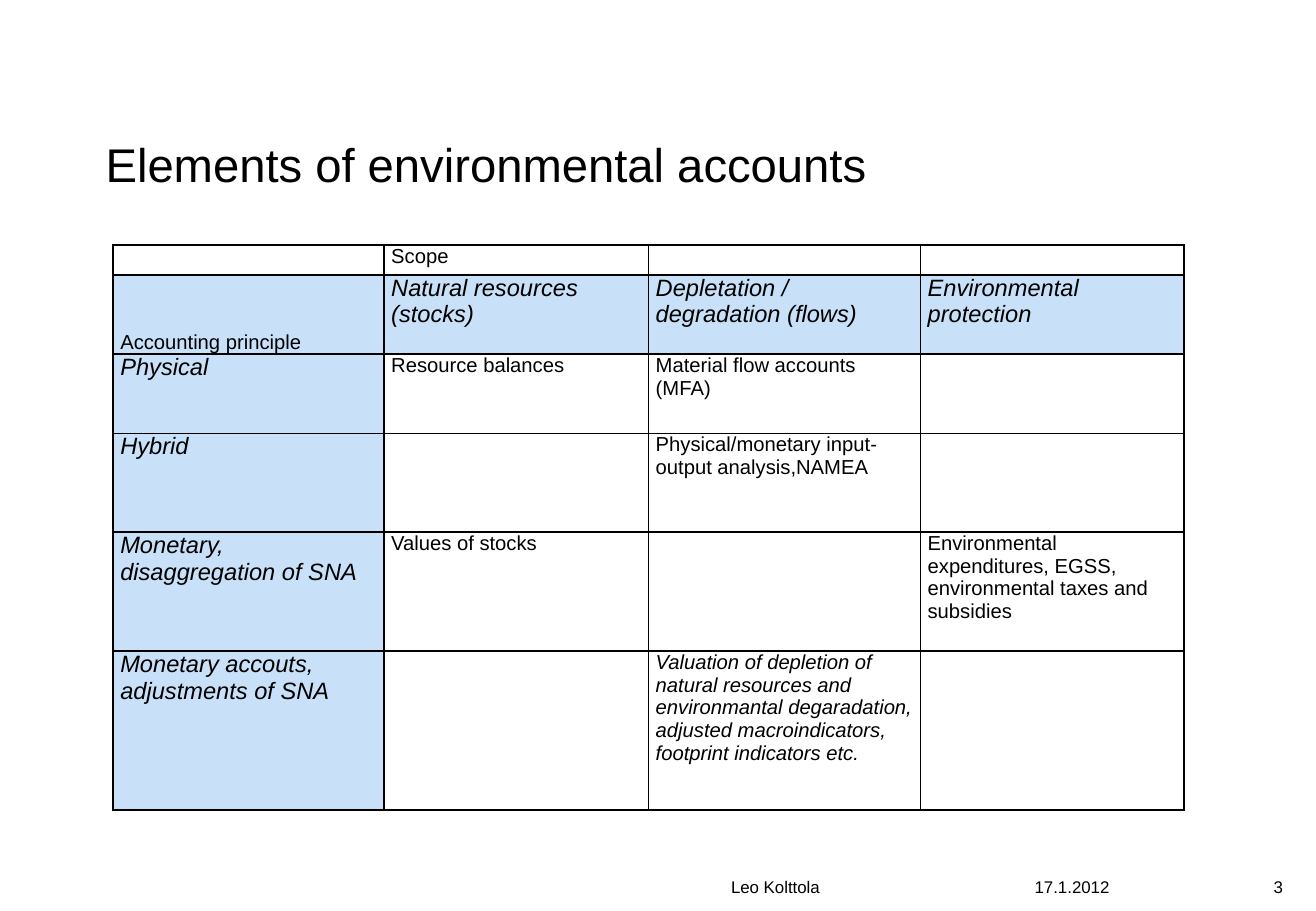
from lxml.etree import SubElement as Sub
from pptx import Presentation
from pptx.dml.color import RGBColor as RGB
from pptx.enum.text import MSO_ANCHOR as Anchor, PP_ALIGN as Align
from pptx.oxml.ns import qn
from pptx.util import Pt

TITLE = "Elements of environmental accounts"
# Cells are (style, text); None is an empty cell.
ROWS = [
    [None, ("body", "Scope"), None, None],
    [("body", "Accounting principle"), ("head", "Natural resources (stocks)"),
     ("head", "Depletation / degradation (flows)"),
     ("head", "Environmental protection")],
    [("head", "Physical"), ("body", "Resource balances"),
     ("body", "Material flow accounts (MFA)"), None],
    [("head", "Hybrid"), None,
     ("body", "Physical/monetary input-output analysis,NAMEA"), None],
    [("head", "Monetary, disaggregation of SNA"), ("body", "Values of stocks"),
     None, ("body", "Environmental expenditures, EGSS, "
                    "environmental taxes and subsidies")],
    [("head", "Monetary accouts, adjustments of SNA"), None,
     ("note", "Valuation of depletion of natural resources and environmantal "
              "degaradation, adjusted macroindicators, footprint indicators etc."),
     None],
]
WIDTHS = [160.6, 156.8, 161.2, 156.2]
HEIGHTS = [17.8, 47, 47, 58.4, 70.6, 94.1]
FOOTER = [  # text, left, width, alignment
    ("Leo Kolttola", 426.2, 174.2, Align.LEFT),
    ("17.1.2012", 606.2, 120.2, Align.LEFT),
    ("3", 724.3, 43.2, Align.RIGHT),
]

THEME = {
    "font": "Arial", "ink": "000000", "tint": "C8E1F8", "rule": 1,
    "title": {"size": Pt(28), "italic": False},
    "head": {"size": Pt(14), "italic": True},
    "body": {"size": Pt(12), "italic": False},
    "note": {"size": Pt(12), "italic": True},
    "foot": {"size": Pt(10), "italic": False},
}


def put(item, values):
    for name, value in values.items():
        setattr(item, name, value)


def write(frame, text, style, align=Align.LEFT):
    frame.word_wrap = True
    para = frame.paragraphs[0]
    para.alignment = align
    run = para.add_run()
    run.text = text
    put(run.font, {"name": THEME["font"], "bold": False, **THEME[style]})
    run.font.color.rgb = RGB.from_string(THEME["ink"])


def rule(cell):
    """Draw a solid line on all four sides of a cell."""
    props = cell._tc.get_or_add_tcPr()
    for side in ("lnL", "lnR", "lnT", "lnB"):
        line = Sub(props, qn("a:" + side), w=str(Pt(THEME["rule"])))
        fill = Sub(line, qn("a:solidFill"))
        Sub(fill, qn("a:srgbClr"), val=THEME["ink"])


def add_title(slide):
    title = slide.shapes.title
    put(title, {"left": Pt(55.4), "top": Pt(49), "width": Pt(663.1),
                "height": Pt(95.8)})
    title.text_frame.vertical_anchor = Anchor.MIDDLE
    write(title.text_frame, TITLE, "title")


def add_grid(slide):
    grid = slide.shapes.add_table(
        len(HEIGHTS), len(WIDTHS), Pt(67), Pt(145.2),
        Pt(sum(WIDTHS)), Pt(sum(HEIGHTS))).table
    put(grid, {"first_row": False, "horz_banding": False})
    for col, width in zip(grid.columns, WIDTHS):
        col.width = Pt(width)
    for r, height in enumerate(HEIGHTS):
        grid.rows[r].height = Pt(height)
        for c, entry in enumerate(ROWS[r]):
            cell = grid.cell(r, c)
            put(cell, {"margin_left": Pt(4.3), "margin_right": Pt(4.3),
                       "margin_top": 0, "margin_bottom": 0,
                       "vertical_anchor": Anchor.BOTTOM if (r, c) == (1, 0)
                       else Anchor.TOP})
            rule(cell)
            if r == 1 or (r > 1 and c == 0):
                cell.fill.solid()
                cell.fill.fore_color.rgb = RGB.from_string(THEME["tint"])
            else:
                cell.fill.background()
            if entry:
                style, text = entry
                write(cell.text_frame, text, style)
            else:  # keeps an empty cell from stretching its row
                Sub(cell.text_frame.paragraphs[0]._p, qn("a:endParaRPr"),
                    sz=str(int(THEME["body"]["size"].pt * 100)))


def add_footer(slide):
    for text, left, width, align in FOOTER:
        box = slide.shapes.add_textbox(Pt(left), Pt(516.2), Pt(width), Pt(30.2))
        write(box.text_frame, text, "foot", align)


def main():
    deck = Presentation()
    put(deck, {"slide_width": Pt(780), "slide_height": Pt(540)})
    slide = deck.slides.add_slide(deck.slide_layouts[5])
    add_title(slide)
    add_grid(slide)
    add_footer(slide)
    deck.save("out.pptx")


if __name__ == "__main__":
    main()
